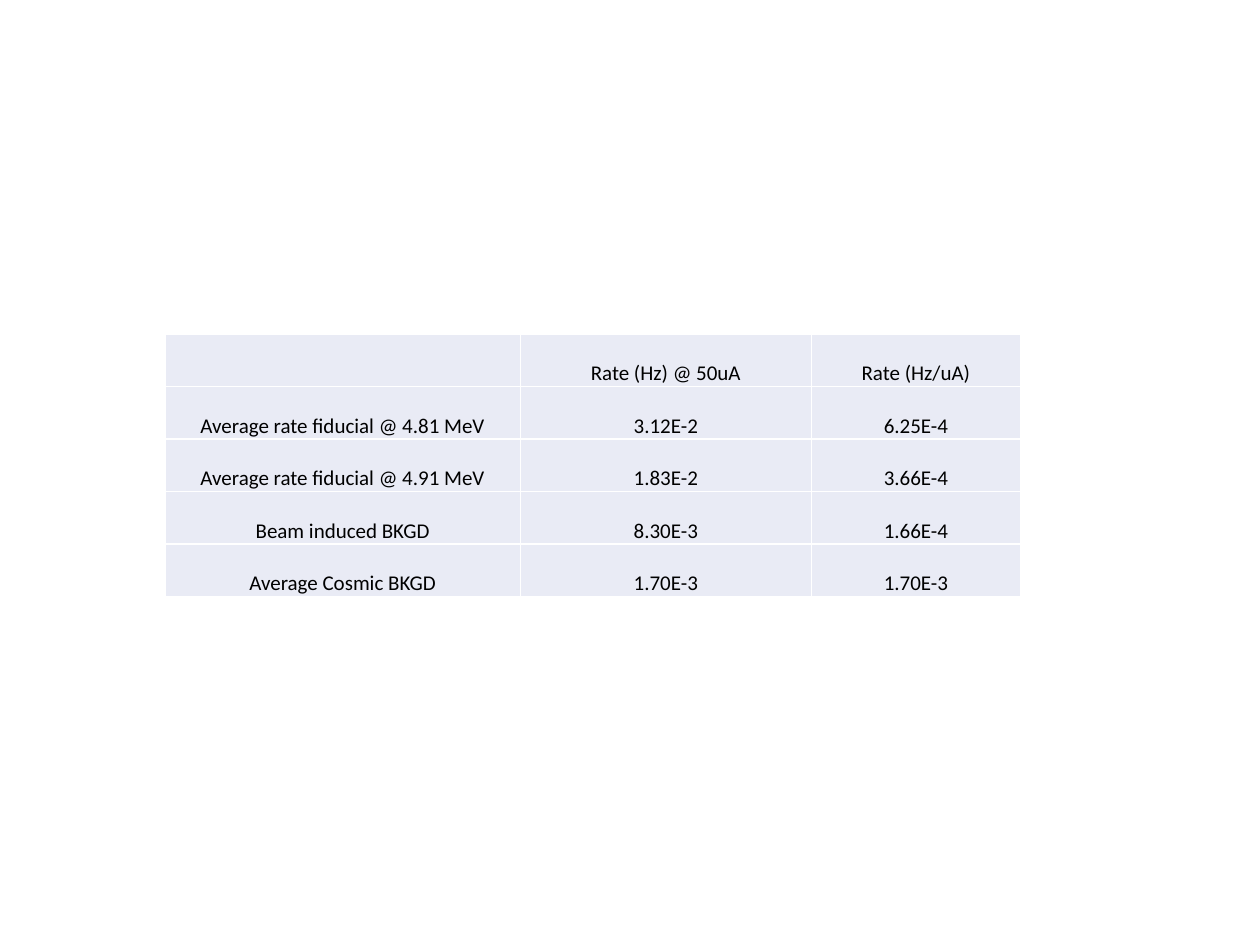
from dataclasses import dataclass

from lxml.etree import SubElement
from pptx import Presentation
from pptx.dml.color import RGBColor
from pptx.enum.text import MSO_ANCHOR, PP_ALIGN
from pptx.oxml.ns import qn
from pptx.util import Inches, Pt


@dataclass(frozen=True)
class Theme:
    """Colours and type of the slide."""
    font: str = "Calibri"
    size: int = 12
    ink: str = "000000"
    cell: str = "E9EBF5"
    border: str = "FFFFFF"
    border_width: int = 1


THEME = Theme()
RATES = [
    ("", "Rate (Hz) @ 50uA", "Rate (Hz/uA)"),
    ("Average rate fiducial @ 4.81 MeV", "3.12E-2", "6.25E-4"),
    ("Average rate fiducial @ 4.91 MeV", "1.83E-2", "3.66E-4"),
    ("Beam induced BKGD", "8.30E-3", "1.66E-4"),
    ("Average Cosmic BKGD", "1.70E-3", "1.70E-3"),
]
COLUMN_WIDTHS = (2.82, 2.31, 1.66)
ROW_HEIGHT = 0.417


def add_borders(cell):
    """Draw a solid line on all four sides of a cell."""
    properties = cell._tc.get_or_add_tcPr()
    for side in ("lnL", "lnR", "lnT", "lnB"):
        line = SubElement(properties, qn(f"a:{side}"), w=str(Pt(THEME.border_width)))
        fill = SubElement(line, qn("a:solidFill"))
        SubElement(fill, qn("a:srgbClr"), val=THEME.border)


def fill_cell(cell, wording):
    """Write and style one cell of the rate table."""
    add_borders(cell)
    cell.fill.solid()
    cell.fill.fore_color.rgb = RGBColor.from_string(THEME.cell)
    cell.vertical_anchor = MSO_ANCHOR.BOTTOM
    cell.margin_left = cell.margin_right = cell.margin_top = Inches(0.01)
    cell.margin_bottom = 0
    cell.text = wording
    paragraph = cell.text_frame.paragraphs[0]
    paragraph.alignment = PP_ALIGN.CENTER
    paragraph.font.name = THEME.font
    paragraph.font.size = Pt(THEME.size)
    paragraph.font.color.rgb = RGBColor.from_string(THEME.ink)


def add_rate_table(slide, left, top):
    """Add the table of signal and background rates."""
    rates = slide.shapes.add_table(
        len(RATES), len(COLUMN_WIDTHS), Inches(left), Inches(top),
        Inches(sum(COLUMN_WIDTHS)), Inches(ROW_HEIGHT * len(RATES))).table
    rates.first_row = rates.horz_banding = False
    for column, width in zip(rates.columns, COLUMN_WIDTHS):
        column.width = Inches(width)
    for row, wordings in zip(rates.rows, RATES):
        row.height = Inches(ROW_HEIGHT)
        for cell, wording in zip(row.cells, wordings):
            fill_cell(cell, wording)


def main():
    """Build the slide and save it."""
    deck = Presentation()
    deck.slide_width, deck.slide_height = Inches(10), Inches(7.5)
    slide = deck.slides.add_slide(deck.slide_layouts[6])
    add_rate_table(slide, 1.31, 2.65)
    deck.save("out.pptx")


if __name__ == "__main__":
    main()
